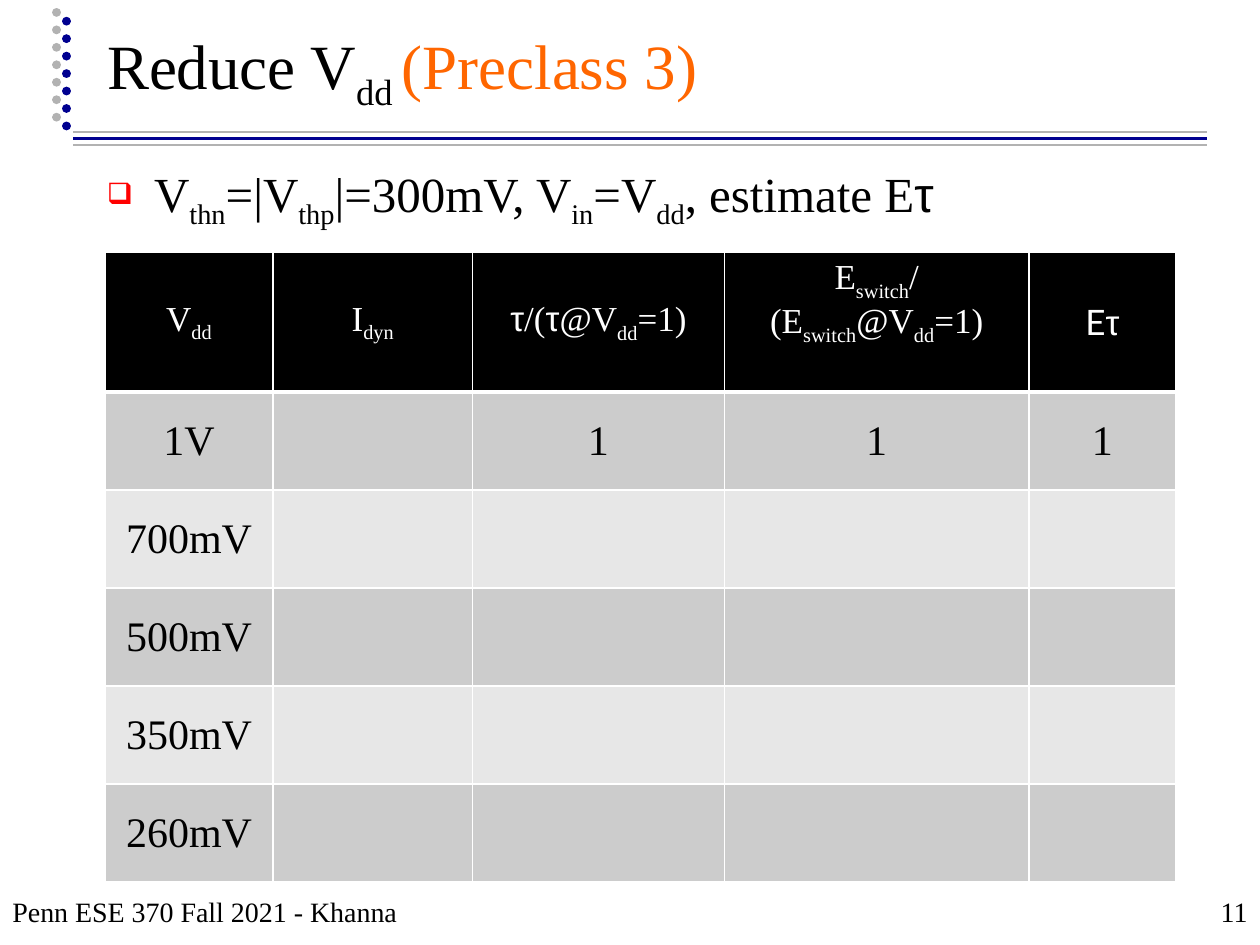
"""Build the slide on reducing Vdd, with an energy-delay table to fill in."""
import itertools

import pptx
import pptx.dml.color
import pptx.enum.dml
import pptx.enum.text
import pptx.oxml.ns
import pptx.oxml.xmlchemy
import pptx.util

Pt = pptx.util.Pt
RGBColor = pptx.dml.color.RGBColor
PP_ALIGN = pptx.enum.text.PP_ALIGN
MSO_ANCHOR = pptx.enum.text.MSO_ANCHOR
qn = pptx.oxml.ns.qn

BLACK = RGBColor(0x00, 0x00, 0x00)
WHITE = RGBColor(0xFF, 0xFF, 0xFF)
NAVY = RGBColor(0x00, 0x00, 0x90)
GRAY = RGBColor(0xB2, 0xB2, 0xB2)
ORANGE = RGBColor(0xFF, 0x66, 0x00)
RED = RGBColor(0xFF, 0x00, 0x00)
BANDS = (RGBColor(0xCC, 0xCC, 0xCC), RGBColor(0xE7, 0xE7, 0xE7))

SERIF = "Times New Roman"
GREEK = "Arial"
COLUMN_WIDTHS = (96, 114, 144, 174, 84)
HEADINGS = ("V~dd~", "I~dyn~", "τ/(τ@V~dd~=1)",
            "E~switch~/(E~switch~@V~dd~=1)", "Eτ")
ROWS = (("1V", "", "1", "1", "1"), ("700mV",), ("500mV",), ("350mV",), ("260mV",))


def make_element(tag, *children, **attributes):
    """Return a new XML element with its attributes and children."""
    element = pptx.oxml.xmlchemy.OxmlElement(tag)
    for key, value in attributes.items():
        element.set(key, str(value))
    element.extend(children)
    return element


def add_formula(paragraph, formula, size, color, font=SERIF):
    """Write a formula whose subscripts stand between tildes."""
    for index, piece in enumerate(formula.split("~")):
        for is_tau, letters in itertools.groupby(piece, lambda letter: letter == "τ"):
            run = paragraph.add_run()
            run.text = "".join(letters)
            run.font.name = GREEK if is_tau else font
            if index % 2:
                run.font._element.set("baseline", "-25000")
    paragraph.font.size = Pt(size)
    paragraph.font.color.rgb = color


def add_rule(slide, start, end, color, width, dotted=False):
    """Draw a straight rule, optionally as a row of round dots."""
    rule = slide.shapes.add_connector(1, *map(Pt, start + end))
    rule.line.color.rgb = color
    rule.line.width = Pt(width)
    properties = rule._element.spPr
    if dotted:
        rule.line.dash_style = pptx.enum.dml.MSO_LINE.ROUND_DOT
        properties.find(qn("a:ln")).set("cap", "rnd")
    properties.append(make_element("a:effectLst"))


def add_decoration(slide):
    """Draw the dotted margin and the triple rule below the title."""
    for y, color, width in ((79.2, NAVY, 2), (82.8, GRAY, 1), (75.6, GRAY, 1)):
        add_rule(slide, (42, y), (690, y), color, width)
    for x, bottom, color in ((32.4, 67, GRAY), (38, 72, NAVY)):
        add_rule(slide, (x, bottom), (x, bottom - 66), color, 5, dotted=True)


def fill_title(slide):
    """Place and write the title."""
    title = slide.shapes.title
    title.left, title.top, title.width, title.height = map(Pt, (54, 8, 613.5, 60))
    frame = title.text_frame
    frame.auto_size = pptx.enum.text.MSO_AUTO_SIZE.NONE
    frame.vertical_anchor = MSO_ANCHOR.BOTTOM
    heading = frame.paragraphs[0]
    heading.alignment = PP_ALIGN.LEFT
    add_formula(heading, "Reduce V~dd ~(Preclass 3)", 36, BLACK)
    heading.runs[-1].font.color.rgb = ORANGE


def add_text_box(slide, left, top, width, height, anchor):
    """Add a wrapping text box and return its first paragraph."""
    frame = slide.shapes.add_textbox(*map(Pt, (left, top, width, height))).text_frame
    frame.word_wrap = True
    frame.vertical_anchor = anchor
    return frame.paragraphs[0]


def add_bullet(paragraph):
    """Give a paragraph a hanging red box bullet."""
    properties = paragraph._p.get_or_add_pPr()
    properties.set("marL", str(Pt(27)))
    properties.set("indent", str(-Pt(27)))
    properties.extend((
        make_element("a:buClr", make_element("a:srgbClr", val=RED)),
        make_element("a:buSzPct", val=60000),
        make_element("a:buChar", char="❑")))


def add_footer(slide, text, left, width, alignment):
    """Add one footer text at the bottom edge."""
    footer = add_text_box(slide, left, 498, width, 36, MSO_ANCHOR.BOTTOM)
    footer.alignment = alignment
    add_formula(footer, text, 16, BLACK)


def add_borders(cell, bottom_width):
    """Draw white borders on the four sides of a cell."""
    properties = cell._tc.get_or_add_tcPr()
    sides = (("a:lnL", 1), ("a:lnR", 1), ("a:lnT", 1), ("a:lnB", bottom_width))
    for position, (side, width) in enumerate(sides):
        fill = make_element("a:solidFill", make_element("a:srgbClr", val=WHITE))
        properties.insert(position, make_element(side, fill, w=Pt(width)))


def fill_cell(cell, formula, size, color, background, font=SERIF, bottom_width=1):
    """Write and format one table cell."""
    cell.fill.solid()
    cell.fill.fore_color.rgb = background
    add_borders(cell, bottom_width)
    cell.vertical_anchor = MSO_ANCHOR.MIDDLE
    if formula:
        paragraph = cell.text_frame.paragraphs[0]
        paragraph.alignment = PP_ALIGN.CENTER
        add_formula(paragraph, formula, size, color, font)


def add_energy_table(slide):
    """Add the table of supply voltages against current, delay and energy."""
    heights = (80,) + (56,) * len(ROWS)
    table = slide.shapes.add_table(
        len(heights), len(COLUMN_WIDTHS), Pt(60), Pt(144),
        Pt(sum(COLUMN_WIDTHS)), Pt(sum(heights))).table
    for column, width in zip(table.columns, COLUMN_WIDTHS):
        column.width = Pt(width)
    for row, height in zip(table.rows, heights):
        row.height = Pt(height)
    for column, heading in enumerate(HEADINGS):
        font = "Lato" if heading == "Eτ" else SERIF
        fill_cell(table.cell(0, column), heading, 20, WHITE, BLACK, font, 3)
    table.cell(0, 3).vertical_anchor = MSO_ANCHOR.TOP
    for index, values in enumerate(ROWS):
        for column in range(len(COLUMN_WIDTHS)):
            value = values[column] if column < len(values) else ""
            fill_cell(table.cell(index + 1, column), value, 24, BLACK, BANDS[index % 2])


def main():
    """Build and save the slide."""
    deck = pptx.Presentation()
    deck.slide_width, deck.slide_height = Pt(720), Pt(540)
    slide = deck.slides.add_slide(deck.slide_layouts[5])
    add_decoration(slide)
    fill_title(slide)
    task = add_text_box(slide, 54, 90, 612, 396, MSO_ANCHOR.TOP)
    add_bullet(task)
    add_formula(task, "V~thn~=|V~thp~|=300mV, V~in~=V~dd~, estimate Eτ", 28, BLACK)
    add_footer(slide, "Penn ESE 370 Fall 2021 - Khanna", 0, 390, PP_ALIGN.LEFT)
    add_footer(slide, "11", 570, 150, PP_ALIGN.RIGHT)
    add_energy_table(slide)
    deck.save("out.pptx")


if __name__ == "__main__":
    main()
